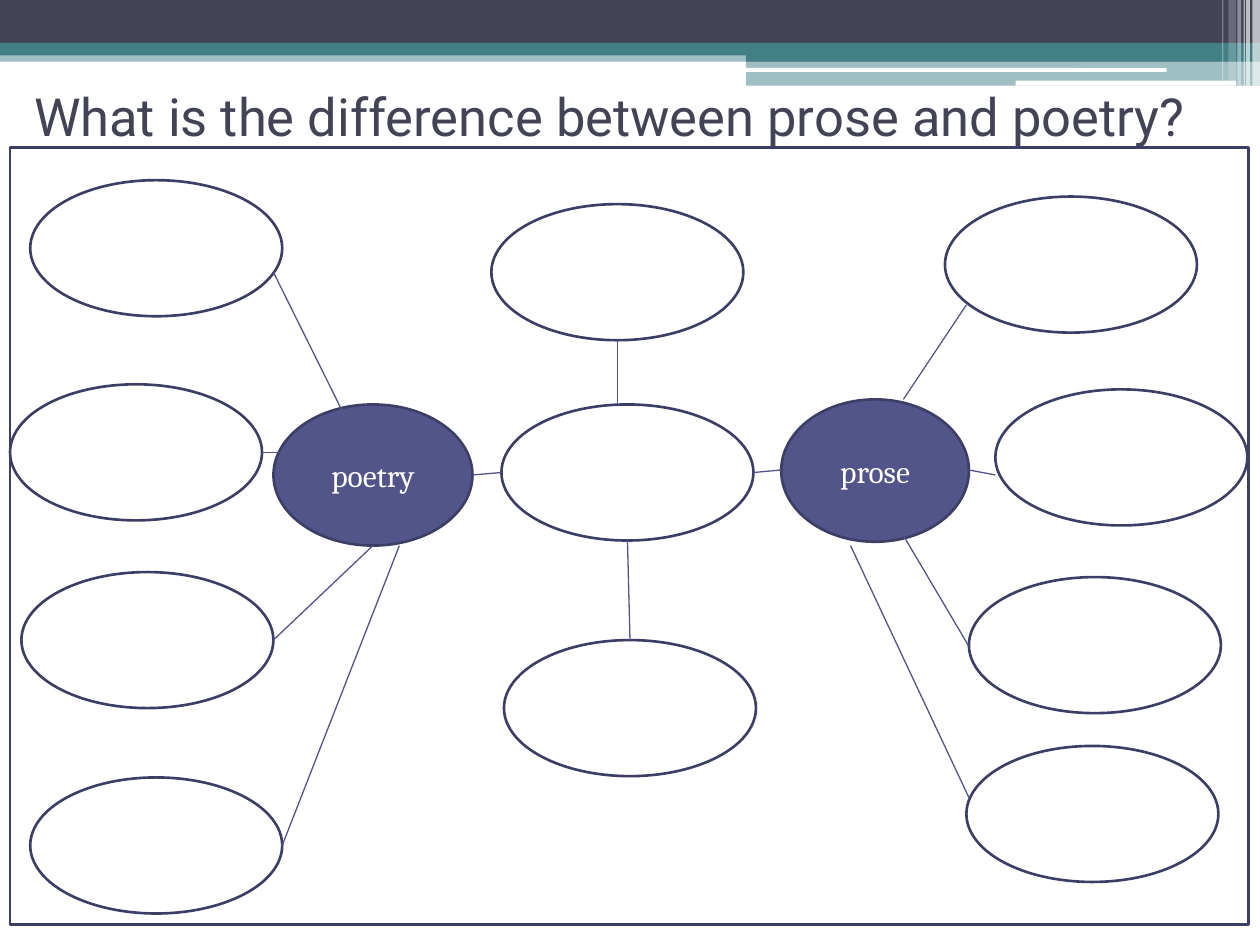
from lxml import etree
from pptx import Presentation
from pptx import util as u
from pptx.dml.color import RGBColor
from pptx.enum import shapes, text
from pptx.oxml.ns import qn

NAVY = RGBColor(0x42, 0x44, 0x56)
TEAL = RGBColor(0x43, 0x80, 0x86)
WHITE = RGBColor(0xFF, 0xFF, 0xFF)
PLUM = RGBColor(0x53, 0x54, 0x8A)
EDGE = RGBColor(0x3D, 0x3E, 0x66)

SCALE = 9144
RECT = shapes.MSO_SHAPE.RECTANGLE
ROUND = shapes.MSO_SHAPE.ROUNDED_RECTANGLE
OVAL = shapes.MSO_SHAPE.OVAL

BARS = [
    (RECT, (0, 40, 1000, 9), TEAL, 50),
    (RECT, (0, 0, 1000, 34), NAVY, 100),
    (RECT, (0, 34, 1000, 10), TEAL, 100),
    (RECT, (592, 39, 408, 10), TEAL, 100),
    (RECT, (592, 48, 408, 20), TEAL, 50),
    (ROUND, (591, 54, 335, 3), WHITE, 100),
    (ROUND, (806, 64, 175, 4), WHITE, 100),
]
STRIPES = [
    (994, 6, 68, 65), (989, 3, 68, 65), (987, 1, 68, 60),
    (982, 3, 68, 40), (975, 6, 64, 20), (970, 1, 64, 30),
]
HUBS = [("poetry", (217, 321, 158, 112)), ("prose", (620, 317, 149, 113))]
BUBBLES = [
    (24, 143), (398, 321), (400, 508), (8, 305), (769, 458), (17, 454),
    (24, 617), (790, 309), (767, 592), (750, 156), (390, 162),
]
LINKS = [
    (375, 377, 398, 375), (598, 375, 620, 373),
    (490, 270, 490, 321), (498, 429, 500, 508),
    (217, 216, 275, 333), (208, 359, 224, 359),
    (217, 508, 296, 433), (224, 671, 317, 433),
    (767, 242, 717, 317), (790, 377, 769, 373),
    (769, 513, 717, 425), (769, 633, 675, 433),
]


def px(*nums):
    return [u.Emu(n * SCALE) for n in nums]


class Deck:
    def __init__(self):
        self.prs = Presentation()
        self.prs.slide_width, self.prs.slide_height = px(1000, 750)
        self.slide = self.prs.slides.add_slide(self.prs.slide_layouts[5])

    def label(self, frame, words, font, size, color, align):
        frame.word_wrap = True
        frame.auto_size = text.MSO_AUTO_SIZE.NONE
        frame.vertical_anchor = text.MSO_ANCHOR.MIDDLE
        para = frame.paragraphs[0]
        para.alignment = align
        run = para.add_run()
        run.text = words
        run.font.name = font
        run.font.size = u.Pt(size)
        run.font.color.rgb = color

    def title(self, words, box):
        head = self.slide.shapes.title
        head.left, head.top, head.width, head.height = px(*box)
        self.label(head.text_frame, words, "Roboto", 30, NAVY, text.PP_ALIGN.LEFT)

    def shape(self, kind, box, fill=None, edge=None):
        item = self.slide.shapes.add_shape(kind, *px(*box))
        item.shadow.inherit = False
        if fill is None:
            item.fill.background()
        else:
            item.fill.solid()
            item.fill.fore_color.rgb = fill
        if edge is None:
            item.line.fill.background()
        else:
            item.line.color.rgb = edge
            item.line.width = u.Pt(1.5)
        return item

    def bar(self, kind, box, fill, alpha):
        item = self.shape(kind, box, fill)
        if alpha < 100:
            tint = item._element.spPr.find(qn("a:solidFill"))[0]
            etree.SubElement(tint, qn("a:alpha")).set("val", str(alpha * 1000))

    def hub(self, words, box):
        item = self.shape(OVAL, box, PLUM, EDGE)
        self.label(item.text_frame, words, "Cambria", 18, WHITE, text.PP_ALIGN.CENTER)

    def link(self, ends):
        line = self.slide.shapes.add_connector(shapes.MSO_CONNECTOR.STRAIGHT, *px(*ends))
        line.line.color.rgb = PLUM
        line.line.width = u.Pt(0.75)
        etree.SubElement(line._element.spPr, qn("a:effectLst"))


def main():
    deck = Deck()
    for bar in BARS:
        deck.bar(*bar)
    for left, wide, high, alpha in STRIPES:
        deck.bar(RECT, (left, 0, wide, high), WHITE, alpha)
    deck.title("What is the difference between prose and poetry?", (17, 33, 966, 117))
    for words, box in HUBS:
        deck.hub(words, box)
    deck.shape(RECT, (8, 117, 983, 617), edge=EDGE)
    for left, top in BUBBLES:
        deck.shape(OVAL, (left, top, 200, 108), edge=EDGE)
    for ends in LINKS:
        deck.link(ends)
    deck.prs.save("out.pptx")


if __name__ == "__main__":
    main()
